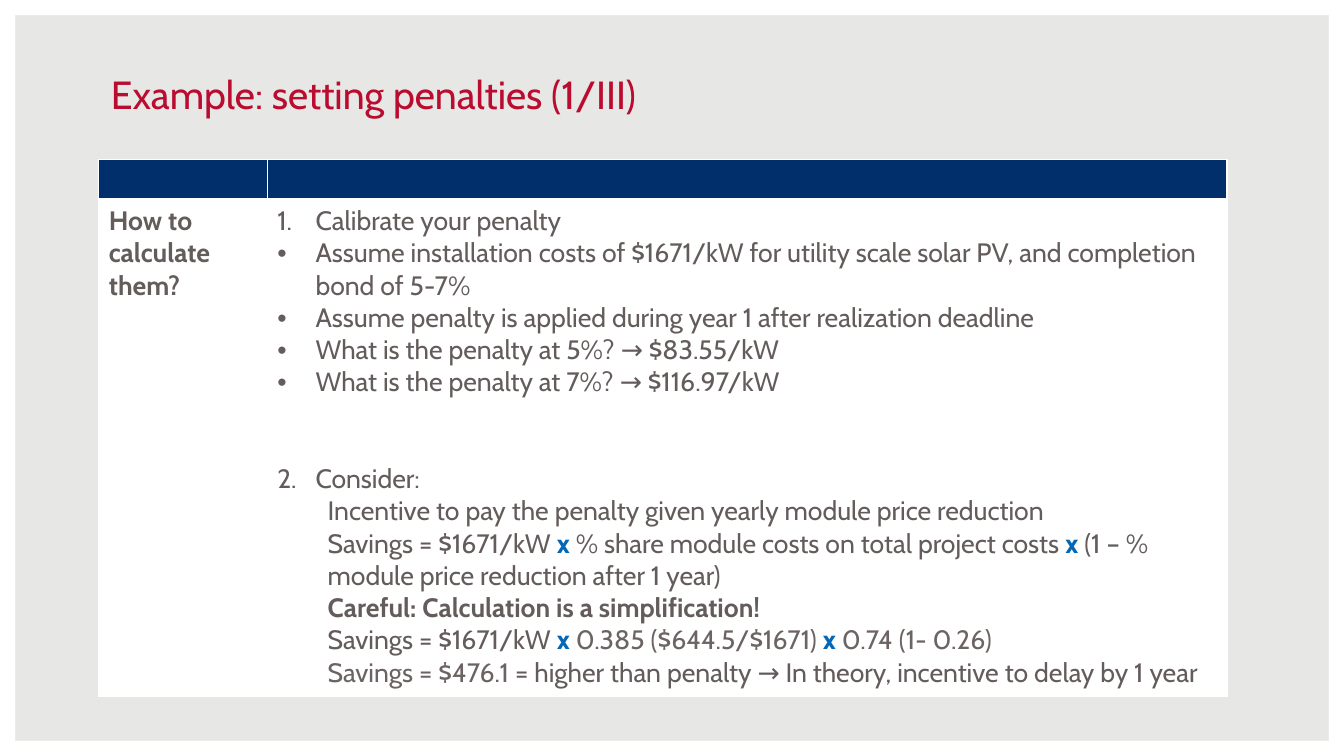
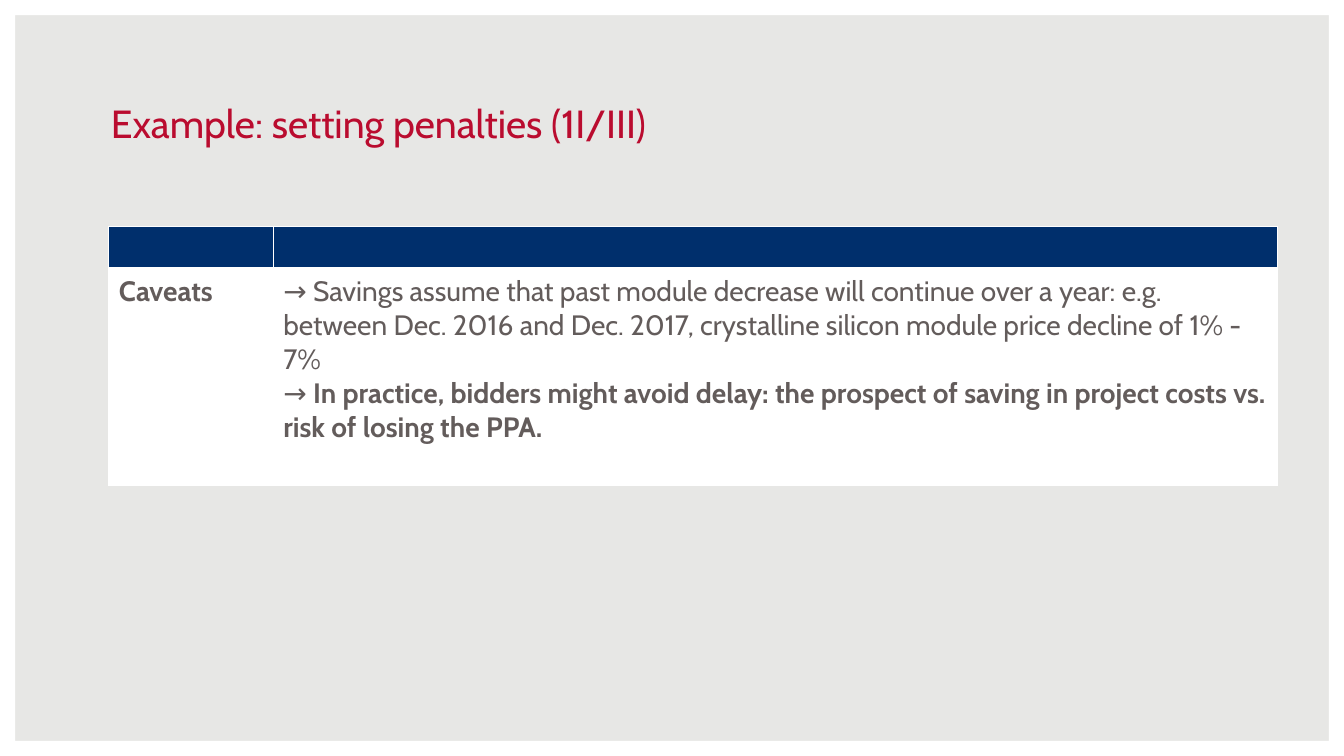
from dataclasses import dataclass
from typing import NamedTuple

from pptx import Presentation
from pptx.dml.color import RGBColor as Rgb
from pptx.enum.shapes import MSO_SHAPE as Shape
from pptx.enum.text import MSO_ANCHOR as Anchor, MSO_AUTO_SIZE as AutoSize, PP_ALIGN as Align
from pptx.oxml.ns import qn
from pptx.util import Inches, Pt
from lxml.etree import SubElement, Element


@dataclass(frozen=True)
class Theme:
    font: str = "Cabin"
    paper: str = "E7E7E5"
    white: str = "FFFFFF"
    navy: str = "002F6C"
    crimson: str = "BA0C2F"
    text: str = "635C5B"
    muted: str = "6C6463"
    blue: str = "0067B9"
    title_size: int = 28
    thin_rule: int = 1
    thick_rule: int = 3


THEME = Theme()
PAGE_WIDTH, PAGE_HEIGHT = Inches(13.33), Inches(7.5)
TITLE_ONLY = 5

# Run formats by role
FORMATS = {
    "title": {"color": THEME.crimson, "bold": False},
    "plain": {"color": THEME.text, "bold": False},
    "strong": {"color": THEME.text, "bold": True},
    "muted": {"color": THEME.muted, "bold": False},
    "times": {"color": THEME.blue, "bold": True},
}


class Span(NamedTuple):
    text: str
    role: str = "plain"


@dataclass(frozen=True)
class Line:
    spans: tuple[Span, ...]
    margin: float = 0
    hanging: float = 0
    bullet: str = ""
    number: int = 0
    space_before: int = 0


@dataclass(frozen=True)
class Page:
    """Lengths are percentages of the slide's width or height."""
    title: str
    title_top: float
    table_left: float
    table_top: float
    columns: tuple[float, float]
    rows: tuple[float, float]
    text_size: int
    label: str
    lines: tuple[Line, ...]


def across(percent: float) -> int:
    return round(PAGE_WIDTH * percent / 100)


def down(percent: float) -> int:
    return round(PAGE_HEIGHT * percent / 100)


def line(*spans: Span) -> Line:
    return Line(spans)


def bullet(text: str) -> Line:
    return Line((Span(text),), 0.38, 0.38, bullet="•")


def numbered(number: int, text: str, space_before: int = 0) -> Line:
    return Line((Span(text),), 0.38, 0.38, number=number, space_before=space_before)


def detail(*spans: Span) -> Line:
    return Line(spans, 0.5)


TIMES = Span("x", "times")
TIMES_SPACED = Span("x ", "times")

PAGES = (
    Page(
        "Example: setting penalties (1/III)", 8.53, 7.35, 21.07,
        (12.53, 71.42), (5.4, 65.6), 19, "How to calculate them?",
        (
            numbered(1, "Calibrate your penalty"),
            bullet("Assume installation costs of $1671/kW for utility scale solar PV, "
                   "and completion bond of 5-7%"),
            bullet("Assume penalty is applied during year 1 after realization deadline"),
            bullet("What is the penalty at 5%? → $83.55/kW"),
            bullet("What is the penalty at 7%? → $116.97/kW"),
            numbered(2, "Consider:", space_before=46),
            detail(Span("Incentive to pay the penalty given yearly module price reduction")),
            detail(Span("Savings = $1671/kW "), TIMES,
                   Span(" % share module costs on total project costs "), TIMES,
                   Span(" (1 – % module price reduction after 1 year)")),
            detail(Span("Careful: Calculation is a simplification!", "strong")),
            detail(Span("Savings = $1671/kW "), TIMES_SPACED,
                   Span("0.385 ($644.5/$1671) ", "muted"), TIMES_SPACED,
                   Span("0.74 (1- 0.26)", "muted")),
            detail(Span("Savings = $476.1 ", "muted"),
                   Span("= higher than penalty → In theory, incentive to delay by 1 year")),
        ),
    ),
    Page(
        "Example: setting penalties (1I/III)", 12.4, 8.1, 30,
        (12.23, 74.7), (5.6, 28.67), 20, "Caveats",
        (
            line(Span("→ Savings assume that past module decrease will continue over a year: "
                      "e.g. between Dec. 2016 and Dec. 2017, crystalline silicon module "
                      "price decline of 1% - 7%")),
            line(Span("→ "),
                 Span("In practice, bidders might avoid delay: the prospect of saving in "
                      "project costs vs. risk of losing the PPA.", "strong")),
        ),
    ),
)


def write_lines(frame, lines: tuple[Line, ...], size: int) -> None:
    for index, item in enumerate(lines):
        para = frame.add_paragraph() if index else frame.paragraphs[0]
        para.alignment = Align.LEFT
        if item.space_before:
            para.space_before = Pt(item.space_before)
        # Indents and list marks
        properties = para._p.get_or_add_pPr()
        properties.set("marL", str(Inches(item.margin)))
        properties.set("indent", str(-Inches(item.hanging)))
        if item.bullet:
            SubElement(properties, qn("a:buFont"), typeface="Arial")
            SubElement(properties, qn("a:buChar"), char=item.bullet)
        elif item.number:
            SubElement(properties, qn("a:buAutoNum"), type="arabicPeriod",
                       startAt=str(item.number))
        for span in item.spans:
            run = para.add_run()
            run.text = span.text
            look = FORMATS[span.role]
            run.font.color.rgb = Rgb.from_string(look["color"])
            settings = {"name": THEME.font, "size": Pt(size), "bold": look["bold"]}
            for name, value in settings.items():
                setattr(run.font, name, value)


def fill_cell(cell, color: str, rules: dict[str, int]) -> None:
    cell.fill.solid()
    cell.fill.fore_color.rgb = Rgb.from_string(color)
    properties = cell._tc.get_or_add_tcPr()
    for position, (side, width) in enumerate(rules.items()):
        rule = Element(qn(f"a:ln{side}"), w=str(Pt(width)))
        paint = SubElement(rule, qn("a:solidFill"))
        SubElement(paint, qn("a:srgbClr"), val=THEME.white)
        properties.insert(position, rule)


def draw_title(slide, page: Page) -> None:
    title = slide.shapes.title
    box = {"left": across(7.5), "top": down(page.title_top),
           "width": across(85), "height": down(7.6)}
    for name, value in box.items():
        setattr(title, name, value)
    frame = title.text_frame
    for name, value in {"word_wrap": True, "vertical_anchor": Anchor.BOTTOM,
                        "auto_size": AutoSize.SHAPE_TO_FIT_TEXT}.items():
        setattr(frame, name, value)
    write_lines(frame, (line(Span(page.title, "title")),), THEME.title_size)


def draw_table(slide, page: Page) -> None:
    table = slide.shapes.add_table(
        2, 2, across(page.table_left), down(page.table_top),
        across(sum(page.columns)), down(sum(page.rows))).table
    table.first_row = table.horz_banding = False
    for column, share in zip(table.columns, page.columns):
        column.width = across(share)
    for row, share in zip(table.rows, page.rows):
        row.height = down(share)

    # Blue heading band above a white body, parted by a thick rule
    thin, thick = THEME.thin_rule, THEME.thick_rule
    bands = ((THEME.navy, thin, thick), (THEME.white, thick, thin))
    for row, (color, top, bottom) in zip(table.rows, bands):
        for cell in row.cells:
            fill_cell(cell, color, {"L": thin, "R": thin, "T": top, "B": bottom})

    label = (line(Span(page.label, "strong")),)
    for column, lines in enumerate((label, page.lines)):
        write_lines(table.cell(1, column).text_frame, lines, page.text_size)


def share_frame(deck, layout, slide) -> None:
    """Set the background and move one frame shape into the shared layout."""
    background = deck.slide_master.background.fill
    background.solid()
    background.fore_color.rgb = Rgb.from_string(THEME.paper)
    border = slide.shapes.add_shape(Shape.FRAME, 0, 0, PAGE_WIDTH, PAGE_HEIGHT)
    border.adjustments[0] = 0.02
    border.shadow.inherit = False
    border.fill.solid()
    border.fill.fore_color.rgb = Rgb.from_string(THEME.white)
    border.line.fill.background()
    layout.shapes.element.insert(2, border.element)


def main() -> None:
    deck = Presentation()
    deck.slide_width, deck.slide_height = PAGE_WIDTH, PAGE_HEIGHT
    layout = deck.slide_layouts[TITLE_ONLY]
    for index, page in enumerate(PAGES):
        slide = deck.slides.add_slide(layout)
        if index == 0:
            share_frame(deck, layout, slide)
        draw_title(slide, page)
        draw_table(slide, page)
    deck.save("out.pptx")


if __name__ == "__main__":
    main()
